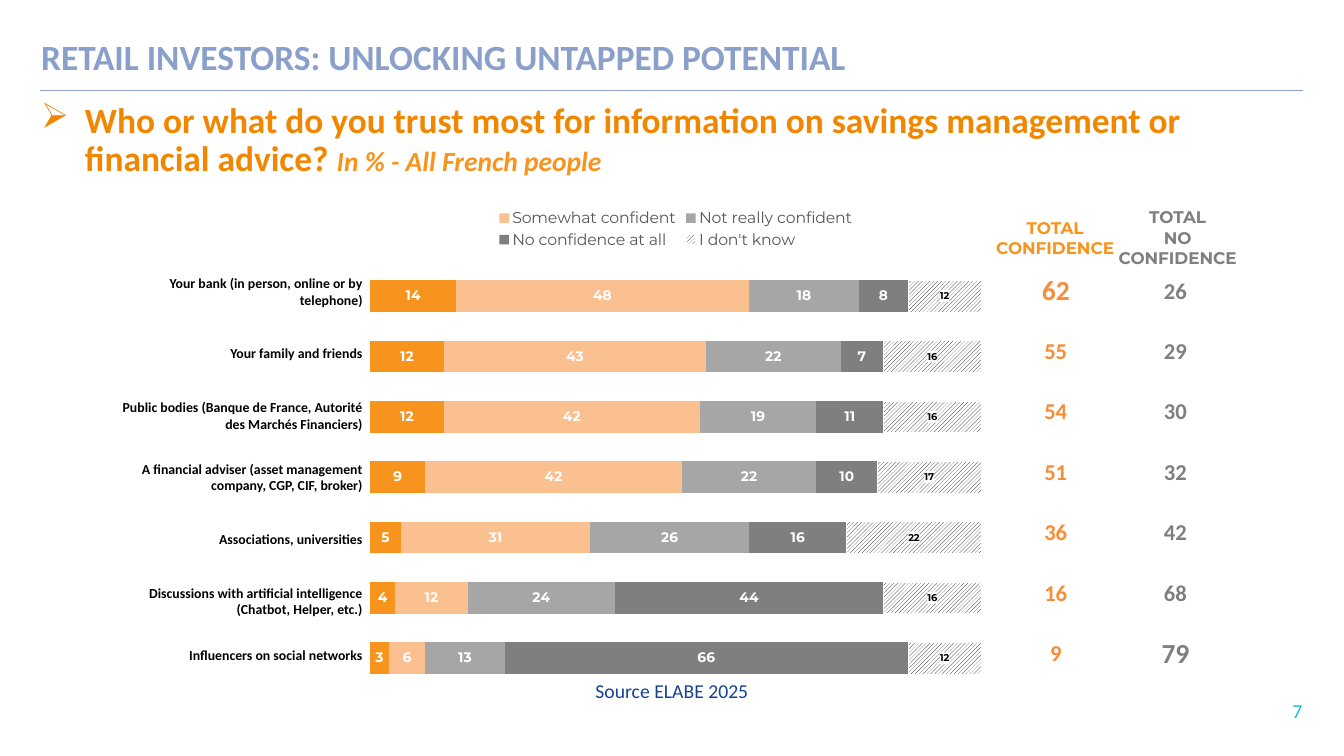
from lxml.etree import SubElement
from pptx import Presentation
from pptx.chart.data import CategoryChartData
from pptx.dml.color import RGBColor
from pptx.enum.chart import XL_CHART_TYPE, XL_LEGEND_POSITION
from pptx.enum.dml import MSO_PATTERN
from pptx.enum.shapes import MSO_CONNECTOR
from pptx.enum.text import MSO_ANCHOR, PP_ALIGN
from pptx.oxml import parse_xml
from pptx.oxml.ns import nsdecls, qn
from pptx.util import Pt

ORANGE, GREY, WHITE = "F7941D", "7F7F7F", "FFFFFF"

SOURCES = [
    "Your bank (in person, online or by telephone)",
    "Your family and friends",
    "Public bodies (Banque de France, Autorité des Marchés Financiers)",
    "A financial adviser (asset management company, CGP, CIF, broker)",
    "Associations, universities",
    "Discussions with artificial intelligence (Chatbot, Helper, etc.)",
    "Influencers on social networks",
]
ANSWERS = [
    ("Complete confidence", ORANGE, [14, 12, 12, 9, 5, 4, 3]),
    ("Somewhat confident", "FAC090", [48, 43, 42, 42, 31, 12, 6]),
    ("Not really confident", "A6A6A6", [18, 22, 19, 22, 26, 24, 13]),
    ("No confidence at all", GREY, [8, 7, 11, 10, 16, 44, 66]),
    ("I don't know", None, [12, 16, 16, 17, 22, 16, 12]),
]
CONFIDENCE = [62, 55, 54, 51, 36, 16, 9]
NO_CONFIDENCE = [26, 29, 30, 32, 42, 68, 79]


def rgb(value):
    return RGBColor.from_string(value)


class Deck:
    base = {"name": "Calibri", "size": 20, "bold": False, "italic": False}

    def __init__(self, prs):
        self.slide = prs.slides.add_slide(prs.slide_layouts[6])

    def format(self, font, color, **style):
        for key, value in {**self.base, **style}.items():
            setattr(font, key, Pt(value) if key == "size" else value)
        font.color.rgb = rgb(color)

    def fill(self, p, runs, align=PP_ALIGN.LEFT):
        p.alignment = align
        for text, style in runs:
            r = p.add_run()
            r.text = text
            self.format(r.font, **style)

    def text(self, box, paragraphs, align=PP_ALIGN.LEFT, anchor=MSO_ANCHOR.TOP, inset=(0, 0)):
        tf = self.slide.shapes.add_textbox(*map(Pt, box)).text_frame
        x, y = map(Pt, inset)
        frame = {"word_wrap": True, "vertical_anchor": anchor, "margin_left": x,
                 "margin_right": x, "margin_top": y, "margin_bottom": y}
        for key, value in frame.items():
            setattr(tf, key, value)
        for i, runs in enumerate(paragraphs):
            p = tf.add_paragraph() if i else tf.paragraphs[0]
            self.fill(p, runs, align)
        return tf

    def bullet(self, box, runs, char, indent):
        p = self.text(box, [runs]).paragraphs[0]
        p.line_spacing = 0.9
        pPr = p._p.get_or_add_pPr()
        pPr.set("marL", str(Pt(indent)))
        pPr.set("indent", str(-Pt(indent)))
        SubElement(pPr, qn("a:buChar")).set("char", char)

    def line(self, x1, y1, x2, y2, color, width):
        ln = self.slide.shapes.add_connector(MSO_CONNECTOR.STRAIGHT, *map(Pt, (x1, y1, x2, y2)))
        ln.line.color.rgb = rgb(color)
        ln.line.width = Pt(width)
        SubElement(ln._element.spPr, qn("a:effectLst"))

    def column(self, x, y, width, row_height, cells, align, left=0.7):
        shape = self.slide.shapes.add_table(
            len(cells), 1, Pt(x), Pt(y), Pt(width), Pt(row_height * len(cells)))
        table = shape.table
        table.first_row = table.horz_banding = False
        margins = {"margin_left": left, "margin_right": 0.7, "margin_top": 0.7, "margin_bottom": 0}
        for i, (text, style) in enumerate(cells):
            table.rows[i].height = Pt(row_height)
            cell = table.cell(i, 0)
            cell.fill.background()
            cell.vertical_anchor = MSO_ANCHOR.MIDDLE
            for key, value in margins.items():
                setattr(cell, key, Pt(value))
            self.fill(cell.text_frame.paragraphs[0], [(text, style)], align)
        return table

    def chart(self, box, categories, answers):
        data = CategoryChartData()
        data.categories = categories
        for name, _, values in answers:
            data.add_series(name, values)
        chart = self.slide.shapes.add_chart(
            XL_CHART_TYPE.BAR_STACKED_100, *map(Pt, box), data).chart
        self.format(chart.font, "58585A", name="Montserrat", size=14)
        chart.has_title = False
        chart.category_axis.reverse_order = True
        chart.value_axis.has_major_gridlines = False
        for axis in (chart.category_axis, chart.value_axis):
            axis.visible = False
        plot = chart.plots[0]
        plot.gap_width, plot.overlap, plot.vary_by_categories = 90, 100, False
        for series, (_, color, _) in zip(plot.series, answers):
            self.series(series, color)
        self.legend(chart, len(answers) - 1)
        self.plot_area(chart, 0, 0.129, 1, 0.834)

    def series(self, series, color):
        fill, labels = series.format.fill, series.data_labels
        labels.show_value = True
        if color:
            fill.solid()
            fill.fore_color.rgb = rgb(color)
            self.format(labels.font, WHITE, name="Montserrat", size=14, bold=True)
            return
        fill.patterned()
        fill.pattern = MSO_PATTERN.WIDE_UPWARD_DIAGONAL
        fill.fore_color.rgb, fill.back_color.rgb = rgb("000000"), rgb(WHITE)
        series.format.line.color.rgb = rgb(WHITE)
        series.format.line.width = Pt(0.75)
        self.format(labels.font, "000000", name="Montserrat", size=10, bold=True)
        labels._element.find(qn("c:txPr")).addprevious(parse_xml(
            f'<c:spPr {nsdecls("c", "a")}><a:solidFill><a:srgbClr val="{WHITE}"/>'
            "</a:solidFill></c:spPr>"))

    def legend(self, chart, hidden):
        chart.has_legend = True
        legend = chart.legend
        legend.position = XL_LEGEND_POSITION.TOP
        legend.include_in_layout = False
        self.format(legend.font, "58585A", name="Montserrat", size=16)
        legend._element.find(qn("c:legendPos")).addnext(parse_xml(
            f'<c:legendEntry {nsdecls("c")}><c:idx val="{hidden}"/>'
            '<c:delete val="1"/></c:legendEntry>'))

    def plot_area(self, chart, x, y, w, h):
        area = chart._chartSpace.chart.plotArea
        for old in area.findall(qn("c:layout")):
            area.remove(old)
        area.insert(0, parse_xml(
            f'<c:layout {nsdecls("c")}><c:manualLayout><c:layoutTarget val="inner"/>'
            '<c:xMode val="edge"/><c:yMode val="edge"/>'
            f'<c:x val="{x}"/><c:y val="{y}"/><c:w val="{w}"/><c:h val="{h}"/>'
            "</c:manualLayout></c:layout>"))


def main():
    prs = Presentation()
    prs.slide_width, prs.slide_height = Pt(1366.56), Pt(768.24)
    s = Deck(prs)

    s.line(40.3, 92.2, 1324.8, 92.2, "8AA0CA", 1.5)
    s.text((41.8, 35.3, 1283, 36), [[("RETAIL INVESTORS: UNLOCKING UNTAPPED POTENTIAL",
                                      {"size": 36, "color": "8AA0CA", "bold": True})]])
    s.text((1275.1, 709.9, 49, 24.5), [[("7", {"color": "1DBADF"})]],
           PP_ALIGN.RIGHT, MSO_ANCHOR.MIDDLE)
    s.bullet((41.8, 104.4, 1215.4, 78.5), [
        ("Who or what do you trust most for information on savings management or financial advice? ",
         {"size": 36, "color": "F18700", "bold": True}),
        ("In % - All French people",
         {"size": 28, "color": ORANGE, "bold": True, "italic": True}),
    ], "➢", 44.6)

    s.chart((376.6, 203.8, 621.4, 514.8), [str(i + 1) for i in range(len(SOURCES))], ANSWERS)

    label = {"size": 14, "color": "000000", "bold": True}
    table = s.column(110.9, 265, 258.5, 62.95, [(t, label) for t in SOURCES], PP_ALIGN.RIGHT, 10.8)
    table.cell(len(SOURCES) - 1, 0).margin_bottom = Pt(17)

    totals = [
        (1033.2, 990, CONFIDENCE, "F68E38", ORANGE, ["TOTAL", "CONFIDENCE"]),
        (1154.9, 1114.6, NO_CONFIDENCE, GREY, GREY, ["TOTAL", "NO CONFIDENCE"]),
    ]
    for x, heading_x, values, color, heading_color, heading in totals:
        cells = [(str(v), {"size": 28 if v == max(values) else 23, "color": color, "bold": True})
                 for v in values]
        s.column(x, 265, 80.6, 61.4, cells, PP_ALIGN.CENTER)
        style = {"name": "Montserrat", "size": 17.1, "color": heading_color, "bold": True}
        s.text((heading_x, 216.7, 165.6, 49), [[(t, style)] for t in heading],
               PP_ALIGN.CENTER, MSO_ANCHOR.MIDDLE, (7.2, 3.6))

    s.text((598.3, 686.2, 427, 31.7), [[("Source ELABE 2025", {"color": "164194"})]],
           inset=(7.2, 3.6))
    prs.save("out.pptx")


if __name__ == "__main__":
    main()
